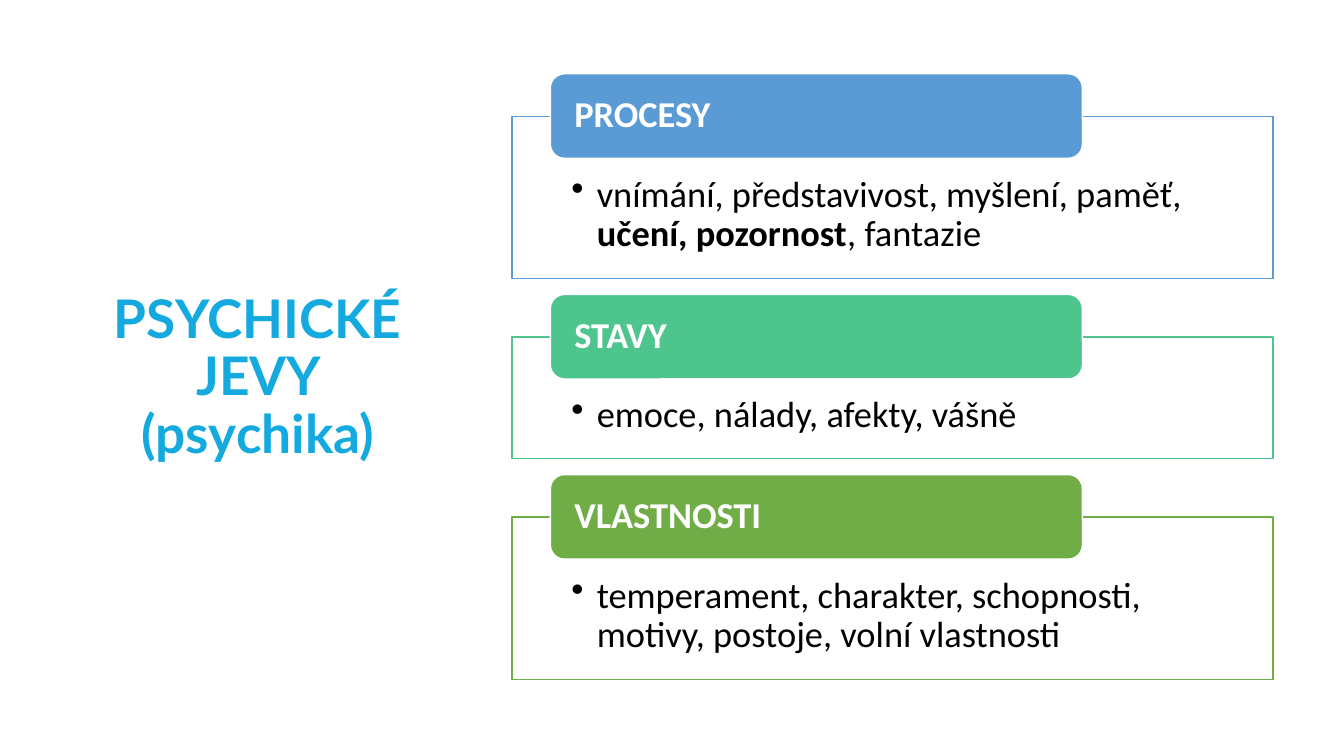
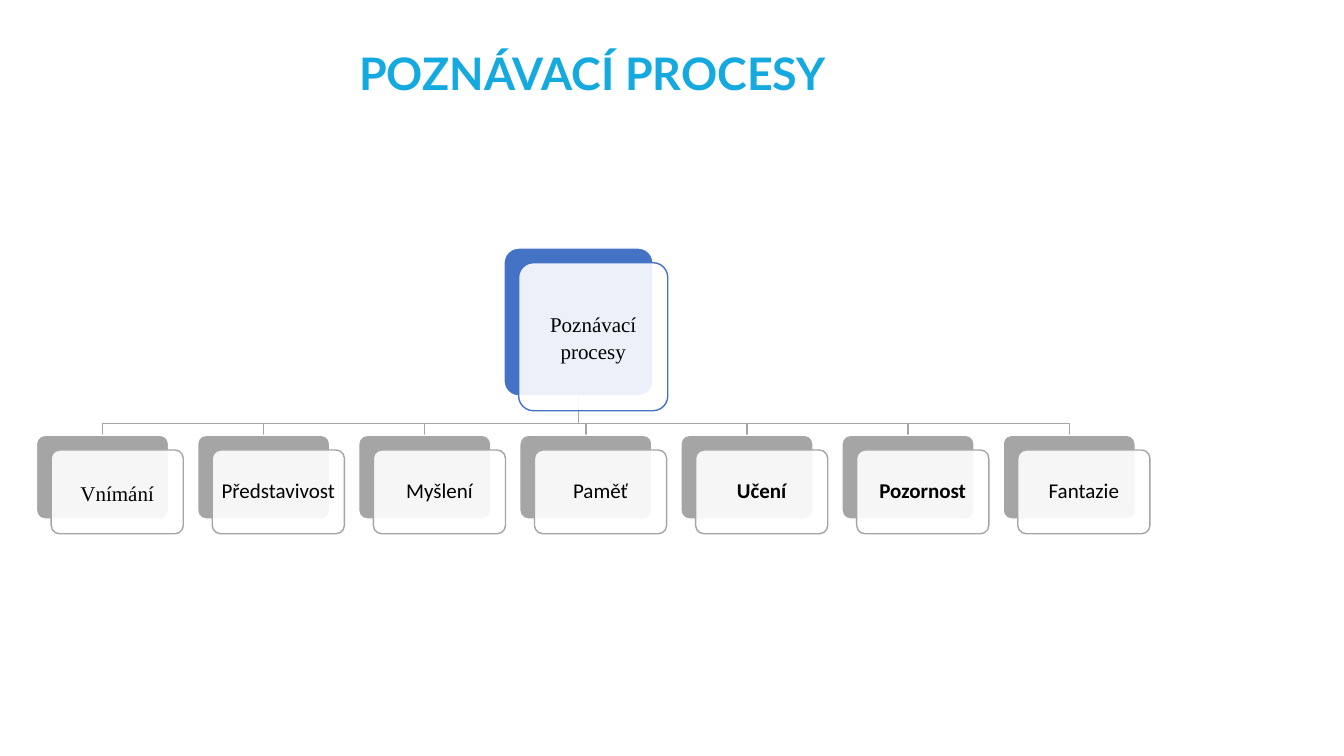
from pptx import Presentation
from pptx.dml.color import RGBColor as Rgb
from pptx.enum.shapes import MSO_SHAPE as Kind
from pptx.enum.text import MSO_ANCHOR as Anchor, PP_ALIGN as Align
from pptx.oxml.xmlchemy import OxmlElement as Node
from pptx.util import Cm, Pt

COLORS = {
    "title": "14AAE0", "white": "FFFFFF", "black": "000000",
    "blue": "5B9BD5", "mint": "4DC58D", "green": "70AD47",
    "root": "4472C4", "gray": "A5A5A5",
}
SANS, SERIF, HEAD = "Calibri", "Times New Roman", "Lato"

# heading, colour, panel height in cm, runs as (text, bold)
GROUPS = [
    ("PROCESY", "blue", 4.09, [
        ("vnímání, představivost, myšlení, paměť, ", False),
        ("učení, pozornost", True), (", fantazie", False)]),
    ("STAVY", "mint", 3.07, [("emoce, nálady, afekty, vášně", False)]),
    ("VLASTNOSTI", "green", 4.09, [
        ("temperament, charakter, schopnosti, motivy, postoje, "
         "volní vlastnosti", False)]),
]
# label, font, bold
LEAVES = [
    ("Vnímání", SERIF, False), ("Představivost", SANS, False),
    ("Myšlení", SANS, False), ("Paměť", SANS, False),
    ("Učení", SANS, True), ("Pozornost", SANS, True),
    ("Fantazie", SANS, False),
]


def color(name):
    return Rgb.from_string(COLORS[name])


def write(shape, runs, size, font, ink, align=Align.LEFT, anchor=Anchor.MIDDLE,
          pads=(0.25, 0.13, 0.25, 0.13), lead=0.9, bullet=False):
    """Fill the shape with one paragraph; pads are left, top, right, bottom."""
    frame = shape.text_frame
    frame.word_wrap = True
    frame.vertical_anchor = anchor
    (frame.margin_left, frame.margin_top,
     frame.margin_right, frame.margin_bottom) = map(Cm, pads)
    para = frame.paragraphs[0]
    para.alignment = align
    para.line_spacing = lead
    if bullet:
        props = para._p.get_or_add_pPr()
        props.set("marL", str(Cm(0.64)))
        props.set("indent", str(-Cm(0.64)))
        mark = Node("a:buChar")
        mark.set("char", "•")
        props.append(mark)
    for text, bold in runs:
        run = para.add_run()
        run.text = text
        run.font.size = Pt(size)
        run.font.name = font
        run.font.bold = bold
        run.font.color.rgb = color(ink)


def title(slide, text, size, *area):
    box = slide.shapes.add_textbox(*map(Cm, area))
    write(box, [(text, True)], size, HEAD, "title", Align.CENTER)


def block(slide, kind, area, fill, line, alpha=None, round_by=None):
    """Draw a filled, outlined shape; alpha is its opacity in percent."""
    shape = slide.shapes.add_shape(kind, *map(Cm, area))
    shape.shadow.inherit = False
    shape.fill.solid()
    shape.fill.fore_color.rgb = color(fill)
    shape.line.color.rgb = color(line)
    shape.line.width = Pt(1)
    if alpha is not None:
        node = Node("a:alpha")
        node.set("val", str(alpha * 1000))
        shape.fill._xPr.find(".//{*}srgbClr").append(node)
    if round_by is not None:
        shape.adjustments[0] = round_by
    return shape


def group(slide, top, name, tint, high, runs):
    """Draw a bulleted panel with a heading tab; return the panel's bottom."""
    start = top + 1.07
    panel = block(slide, Kind.RECTANGLE, (12.9, start, 19.18, high),
                  "white", tint, alpha=90)
    write(panel, runs, 26, SANS, "black", anchor=Anchor.TOP,
          pads=(1.5, 1.5, 1.5, 0.5), bullet=True)
    tab = block(slide, Kind.ROUNDED_RECTANGLE, (13.87, top, 13.41, 2.13),
                tint, "white")
    write(tab, [(name, True)], 26, SANS, "white", pads=(0.5, 0, 0.5, 0))
    return start + high


def card(slide, left, top, wide, high, tint, label, font, bold=False):
    """Draw a coloured card with a pale labelled card shifted over it."""
    shift = 0.37
    block(slide, Kind.ROUNDED_RECTANGLE, (left, top, wide, high),
          tint, "white", round_by=0.1)
    front = block(slide, Kind.ROUNDED_RECTANGLE,
                  (left + shift, top + shift, wide, high),
                  "white", tint, alpha=90, round_by=0.1)
    write(front, [(label, bold)], 15, font, "black", Align.CENTER,
          pads=(0.1, 0.15, 0.1, 0.15), lead=1.07 if font == SERIF else 0.9)


def branch(slide, start, bend, end):
    """Draw an angled line from start to end that turns at height bend."""
    points = [(start[0], bend), (end[0], bend), end]
    pen = slide.shapes.build_freeform(Cm(start[0]), Cm(start[1]))
    pen.add_line_segments([(Cm(x), Cm(y)) for x, y in points], close=False)
    line = pen.convert_to_shape()
    line.shadow.inherit = False
    line.fill.background()
    line.line.color.rgb = color("gray")
    line.line.width = Pt(1)


def groups(slide):
    title(slide, "PSYCHICKÉ JEVY (psychika)", 38, 1.75, 1.78, 9.5, 15.52)
    top = 1.86
    for item in GROUPS:
        top = group(slide, top, *item) + 0.4


def tree(slide):
    title(slide, "POZNÁVACÍ PROCESY", 32, 0.89, 1.02, 28.09, 1.8)
    left, top, wide, high = 12.7, 6.25, 3.76, 3.73
    row, leaf, tall = 10.97, 3.33, 2.11
    spots = [0.92 + 4.06 * i for i in range(len(LEAVES))]
    stem = (left + wide / 2, top + high)
    for spot in spots:
        branch(slide, stem, 10.67, (spot + leaf / 2, row))
    card(slide, left, top, wide, high, "root", "Poznávací procesy", SERIF)
    for spot, item in zip(spots, LEAVES):
        card(slide, spot, row, leaf, tall, "gray", *item)


def main():
    deck = Presentation()
    deck.slide_width, deck.slide_height = Cm(33.87), Cm(19.05)
    for draw in (groups, tree):
        draw(deck.slides.add_slide(deck.slide_layouts[6]))
    deck.save("out.pptx")


if __name__ == "__main__":
    main()
